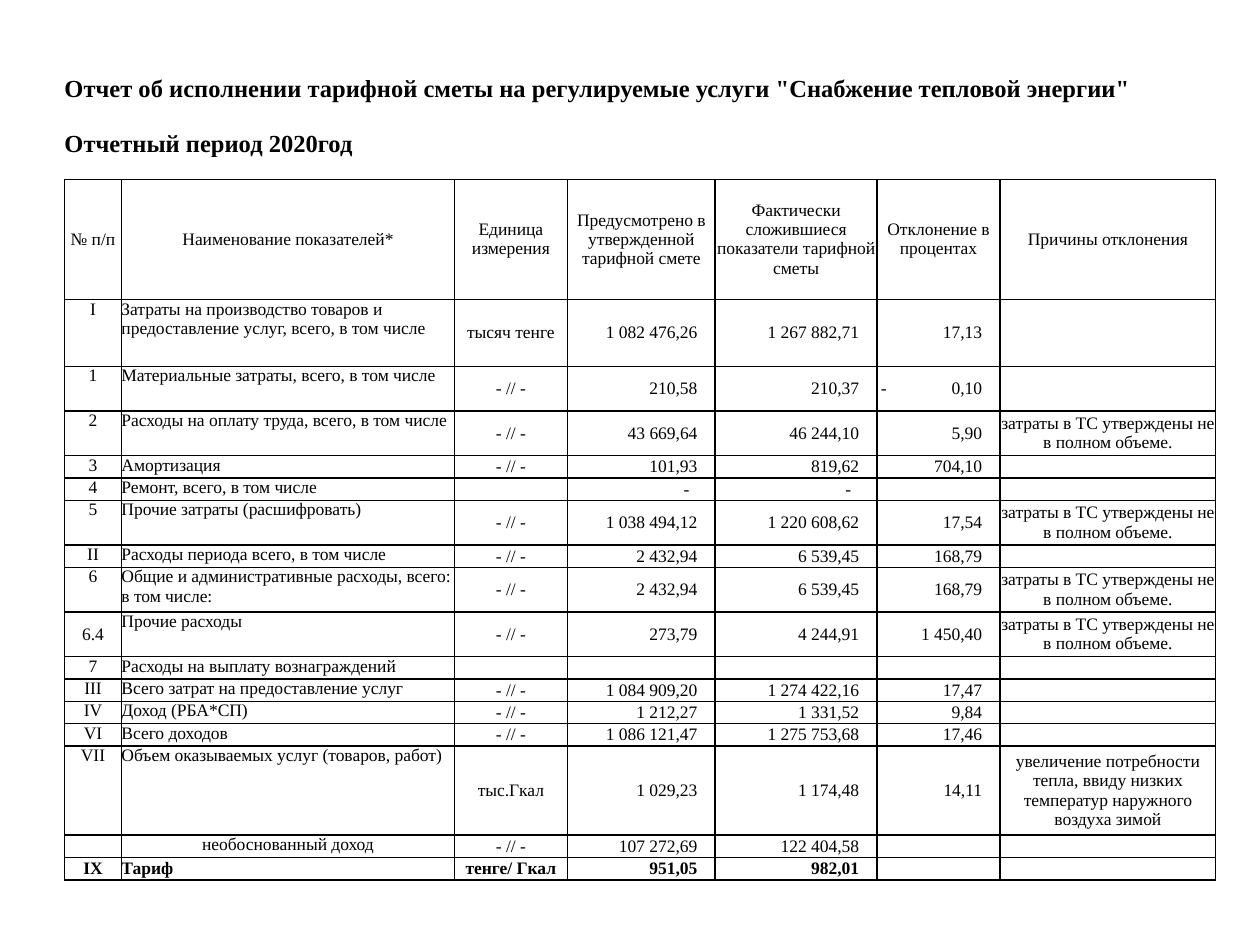
from lxml import etree
from pptx import Presentation
from pptx.dml.color import RGBColor
from pptx.enum.text import MSO_ANCHOR, PP_ALIGN
from pptx.oxml.ns import qn
from pptx.util import Cm, Pt

LEFT, CENTER, RIGHT = PP_ALIGN.LEFT, PP_ALIGN.CENTER, PP_ALIGN.RIGHT
TOP, MIDDLE = MSO_ANCHOR.TOP, MSO_ANCHOR.MIDDLE
FONT, BLACK, WHITE = "Times New Roman", "000000", "FFFFFF"

TITLE = 'Отчет об исполнении тарифной сметы на регулируемые услуги "Снабжение тепловой энергии"'
PERIOD = "Отчетный период 2020год"
HEADER = ["№ п/п", "Наименование показателей*", "Единица измерения",
          "Предусмотрено в утвержденной тарифной смете",
          "Фактически сложившиеся показатели тарифной сметы",
          "Отклонение в процентах", "Причины отклонения"]
SAME = "- // -"
PARTIAL = "затраты в ТС утверждены не в полном объеме."
DEMAND = "увеличение потребности тепла, ввиду низких температур наружного воздуха зимой"
INDICATORS = [
    ("I", "Затраты на производство товаров и предоставление услуг, всего, в том числе",
     "тысяч тенге", "1 082 476,26", "1 267 882,71", "17,13", ""),
    ("1", "Материальные затраты, всего, в том числе", SAME, "210,58", "210,37", "-\t0,10", ""),
    ("2", "Расходы на оплату труда, всего, в том числе", SAME,
     "43 669,64", "46 244,10", "5,90", PARTIAL),
    ("3", "Амортизация", SAME, "101,93", "819,62", "704,10", ""),
    ("4", "Ремонт, всего, в том числе", "", "-", "-", "", ""),
    ("5", "Прочие затраты (расшифровать)", SAME,
     "1 038 494,12", "1 220 608,62", "17,54", PARTIAL),
    ("II", "Расходы периода всего, в том числе", SAME, "2 432,94", "6 539,45", "168,79", ""),
    ("6", "Общие и административные расходы, всего: в том числе:", SAME,
     "2 432,94", "6 539,45", "168,79", PARTIAL),
    ("6.4", "Прочие расходы", SAME, "273,79", "4 244,91", "1 450,40", PARTIAL),
    ("7", "Расходы на выплату вознаграждений", "", "", "", "", ""),
    ("III", "Всего затрат на предоставление услуг", SAME,
     "1 084 909,20", "1 274 422,16", "17,47", ""),
    ("IV", "Доход (РБА*СП)", SAME, "1 212,27", "1 331,52", "9,84", ""),
    ("VI", "Всего доходов", SAME, "1 086 121,47", "1 275 753,68", "17,46", ""),
    ("VII", "Объем оказываемых услуг (товаров, работ)", "тыс.Гкал",
     "1 029,23", "1 174,48", "14,11", DEMAND),
    ("", "необоснованный доход", SAME, "107 272,69", "122 404,58", "", ""),
    ("IX", "Тариф", "тенге/ Гкал", "951,05", "982,01", "", ""),
]
COLUMN_WIDTHS = [1.15, 6.71, 2.28, 2.98, 3.26, 2.48, 4.35]
HEADING_HEIGHTS = [0.57, 0.53, 0.57, 0.42]
HEADER_HEIGHT = 2.42
LINE_HEIGHT = 0.45
INDICATOR_LINES = [3, 2, 2, 1, 1, 2, 1, 2, 2, 1, 1, 1, 1, 4, 1, 1]
NUMBER_MARGIN, DASH_MARGIN, SIGN_MARGIN = 0.36, 0.52, 0.08
NUMBER_COLUMNS = (3, 4, 5)


def color(value):
    return RGBColor.from_string(value)


def add_border(cell, side, value):
    line = etree.SubElement(cell._tc.get_or_add_tcPr(), qn(f"a:ln{side}"), w=str(Pt(1)))
    fill = etree.SubElement(line, qn("a:solidFill"))
    etree.SubElement(fill, qn("a:srgbClr"), val=value)


def style_cell(cell, border, bottom):
    cell.margin_left = cell.margin_right = cell.margin_top = cell.margin_bottom = 0
    for side, value in zip("LRTB", (border, border, border, bottom)):
        add_border(cell, side, value)
    cell.fill.solid()
    cell.fill.fore_color.rgb = color(WHITE)


def write_cell(cell, text, size=10, bold=False, alignment=CENTER, anchor=MIDDLE):
    paragraph = cell.text_frame.paragraphs[0]
    cell.vertical_anchor = anchor
    paragraph.alignment = alignment
    if not text:
        etree.SubElement(paragraph._p, qn("a:endParaRPr"), sz=str(size * 100))
        return
    first, *rest = text.split("\t")
    for part in [first] + ["\t" + piece for piece in rest]:
        run = paragraph.add_run()
        run.text = part
        run.font.name, run.font.size, run.font.bold = FONT, Pt(size), bold
        run.font.color.rgb = color(BLACK)


def align_signed_number(cell, width):
    paragraph = cell.text_frame.paragraphs[0]
    paragraph.alignment = LEFT
    cell.margin_left, cell.margin_right = Cm(SIGN_MARGIN), 0
    position = Cm(width - NUMBER_MARGIN - SIGN_MARGIN)
    tabs = etree.SubElement(paragraph._p.get_or_add_pPr(), qn("a:tabLst"))
    etree.SubElement(tabs, qn("a:tab"), pos=str(position), algn="r")


def write_indicator(cells, values):
    total = values[0] == "IX"
    for column, (cell, text) in enumerate(zip(cells, values)):
        alignment, anchor = CENTER, MIDDLE
        if column == 1 and values[0]:
            alignment = LEFT
        if column in NUMBER_COLUMNS:
            alignment = RIGHT
            cell.margin_right = Cm(DASH_MARGIN if text == "-" else NUMBER_MARGIN)
        if column < 2 and not total and text != "6.4":
            anchor = TOP
        write_cell(cell, text, bold=total, alignment=alignment, anchor=anchor)
        if "\t" in text:
            align_signed_number(cell, COLUMN_WIDTHS[column])


def main():
    presentation = Presentation()
    presentation.slide_width, presentation.slide_height = Cm(25.4), Cm(19.05)
    slide = presentation.slides.add_slide(presentation.slide_layouts[6])

    indicator_heights = [LINE_HEIGHT * lines for lines in INDICATOR_LINES]
    heights = HEADING_HEIGHTS + [HEADER_HEIGHT] + indicator_heights
    table = slide.shapes.add_table(len(heights), len(COLUMN_WIDTHS), Cm(1.3), Cm(1.52),
                                   Cm(sum(COLUMN_WIDTHS)), Cm(sum(heights))).table
    table.first_row = table.horz_banding = False
    for column, width in zip(table.columns, COLUMN_WIDTHS):
        column.width = Cm(width)

    heading_count = len(HEADING_HEIGHTS)
    headings = {(0, 0): TITLE, (2, 0): PERIOD}
    for index, (row, height) in enumerate(zip(table.rows, heights)):
        row.height = Cm(height)
        border = WHITE if index < heading_count else BLACK
        bottom = WHITE if index < heading_count - 1 else BLACK
        cells = list(row.cells)
        for cell in cells:
            style_cell(cell, border, bottom)
        if index < heading_count:
            for column, cell in enumerate(cells):
                text = headings.get((index, column), "")
                write_cell(cell, text, 14 if text else 10, True, LEFT)
        elif index == heading_count:
            for cell, text in zip(cells, HEADER):
                write_cell(cell, text)
        else:
            write_indicator(cells, INDICATORS[index - heading_count - 1])

    table.cell(0, 0).merge(table.cell(0, len(COLUMN_WIDTHS) - 1))
    table.cell(2, 0).merge(table.cell(2, 1))
    presentation.save("out.pptx")


if __name__ == "__main__":
    main()
